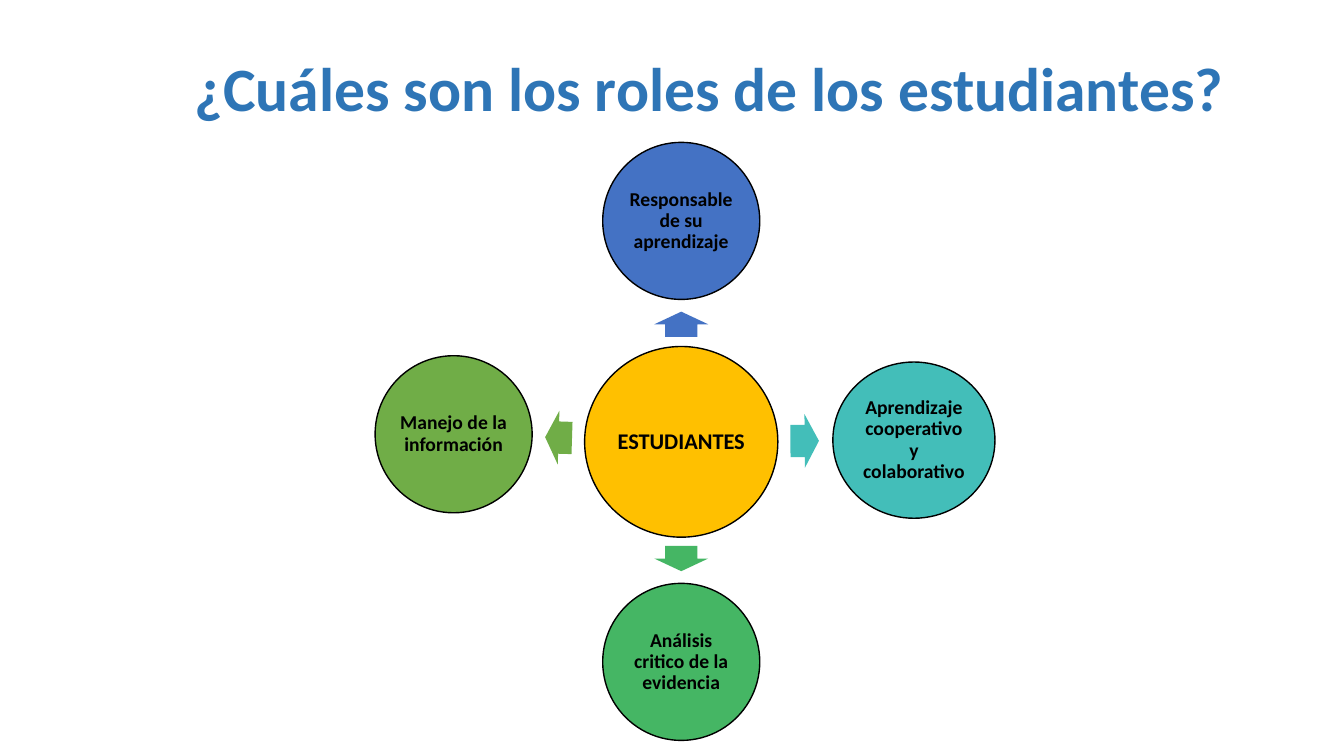
from pptx import Presentation
from pptx.dml.color import RGBColor as Rgb
from pptx.enum.shapes import MSO_SHAPE as Kind
from pptx.enum.text import MSO_ANCHOR as Anchor, PP_ALIGN as Align
from pptx.util import Inches, Pt

COLS, ROWS = 160, 90
HUB = (81.1, 52.6)
HUES = {
    "title": "2E75B6", "ink": "000000", "hub": "FFC000", "blue": "4472C4",
    "teal": "43BEB9", "green": "45B664", "olive": "70AD47",
}
ROLES = [
    ("Responsable de su aprendizaje", "blue",
     (81.1, 26.3), (18.7, 18.7), (81.1, 38.6), 3, 270),
    ("Aprendizaje cooperativo y colaborativo", "teal",
     (108.8, 52.4), (19.3, 18.6), (95.8, 52.5), 3.4, 359.6),
    ("Análisis critico de la evidencia", "green",
     (81.1, 78.8), (18.7, 18.7), (81.1, 66.5), 3, 90),
    ("Manejo de la información", "olive",
     (54, 51.7), (18.7, 18.7), (66.5, 52.1), 3.2, 181.8),
]


class Deck:
    """Draws styled elements on a slide measured in grid columns and rows."""

    def __init__(self):
        self.prs = Presentation()
        self.prs.slide_width = Inches(13.33)
        self.prs.slide_height = Inches(7.5)
        self.slide = self.prs.slides.add_slide(self.prs.slide_layouts[6])
        self.font = "Calibri"

    def box(self, x, y, w, h):
        col = self.prs.slide_width / COLS
        row = self.prs.slide_height / ROWS
        return [round(n) for n in (x * col, y * row, w * col, h * row)]

    def label(self, frame, text, size, hue, align):
        frame.word_wrap = True
        frame.vertical_anchor = Anchor.MIDDLE
        par = frame.paragraphs[0]
        par.text = text
        par.alignment = align
        par.line_spacing = 0.9
        font = par.font
        font.name, font.size, font.bold = self.font, Pt(size), True
        font.color.rgb = Rgb.from_string(HUES[hue])

    def title(self, text, x, y, w, h):
        area = self.slide.shapes.add_textbox(*self.box(x, y, w, h))
        self.label(area.text_frame, text, 44, "title", Align.LEFT)

    def shape(self, kind, mid, size, hue):
        (x, y), (w, h) = mid, size
        spot = self.box(x - w / 2, y - h / 2, w, h)
        item = self.slide.shapes.add_shape(kind, *spot)
        item.shadow.inherit = False
        item.fill.solid()
        item.fill.fore_color.rgb = Rgb.from_string(HUES[hue])
        return item

    def circle(self, text, mid, size, hue, points=14):
        disc = self.shape(Kind.OVAL, mid, size, hue)
        disc.line.color.rgb = Rgb.from_string(HUES["ink"])
        disc.line.width = Pt(1)
        frame = disc.text_frame
        frame.margin_left = frame.margin_right = Inches(0.02)
        frame.margin_top = frame.margin_bottom = Inches(0.02)
        self.label(frame, text, points, "ink", Align.CENTER)

    def arrow(self, mid, length, turn, hue):
        item = self.shape(Kind.RIGHT_ARROW, mid, (length, 6.4), hue)
        item.line.fill.background()
        item.adjustments[0] = 0.6
        item.adjustments[1] = 0.5
        item.rotation = turn


def main():
    deck = Deck()
    deck.circle("ESTUDIANTES", HUB, (23, 22.7), "hub", 16)
    for text, hue, mid, size, tip, length, turn in ROLES:
        deck.arrow(tip, length, turn, hue)
        deck.circle(text, mid, size, hue)
    deck.title("¿Cuáles son los roles de los estudiantes?", 22, 2.2, 138, 17.4)
    deck.prs.save("out.pptx")


if __name__ == "__main__":
    main()
